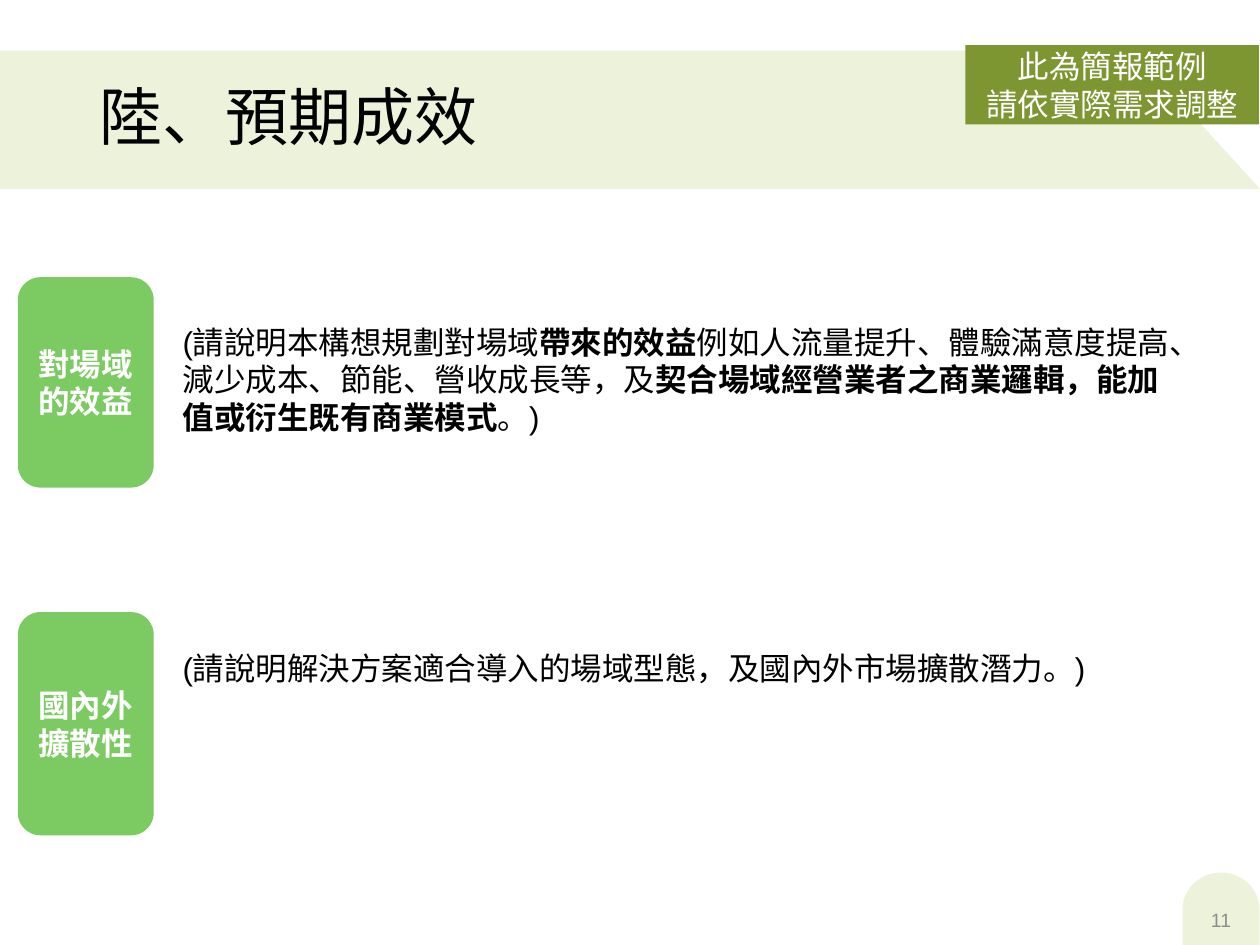
"""Build the expected-benefits slide."""
from dataclasses import dataclass

from pptx import Presentation
from pptx.dml.color import RGBColor
from pptx.enum.shapes import MSO_SHAPE as Preset
from pptx.enum.text import MSO_ANCHOR as Anchor, MSO_AUTO_SIZE as AutoSize, PP_ALIGN as Align
from pptx.shapes.autoshape import Shape
from pptx.slide import Slide
from pptx.util import Cm, Pt

PALE = RGBColor(0xED, 0xF3, 0xDB)
OLIVE = RGBColor(0x7E, 0x96, 0x32)
GREEN = RGBColor(0x7C, 0xCA, 0x62)
GRAY = RGBColor(0x8C, 0x8C, 0x8C)
WHITE = RGBColor(0xFF, 0xFF, 0xFF)
BLACK = RGBColor(0x00, 0x00, 0x00)
FONT = "Arial"
LABEL_LEFT, LABEL_WIDTH = 0.36, 2.74
BODY_LEFT, BODY_WIDTH = 3.43, 20.62


@dataclass(frozen=True)
class Box:
    left: float
    top: float
    width: float
    height: float

    def lengths(self) -> tuple[Cm, Cm, Cm, Cm]:
        return Cm(self.left), Cm(self.top), Cm(self.width), Cm(self.height)


@dataclass(frozen=True)
class Style:
    size: float
    color: RGBColor
    bold: bool = False
    align: Align = Align.LEFT
    anchor: Anchor = Anchor.MIDDLE


@dataclass(frozen=True)
class Benefit:
    label: str
    label_top: float
    label_height: float
    body_top: float
    body_height: float
    phrases: tuple[tuple[str, bool], ...]


BODY_STYLE = Style(18, BLACK, anchor=Anchor.TOP)
LABEL_STYLE = Style(18, WHITE, bold=True, align=Align.CENTER)

BENEFITS = (
    Benefit("對場域的效益", 5.59, 4.24, 6.38, 2.57, (
        ("(請說明本構想規劃對場域", False),
        ("帶來的效益", True),
        ("例如人流量提升、體驗滿意度提高、減少成本、節能、營收成長等，及", False),
        ("契合場域經營業者之商業邏輯，能加值或衍生既有商業模式", True),
        ("。)", False),
    )),
    Benefit("國內外擴散性", 12.34, 4.5, 12.95, 1.02, (
        ("(請說明解決方案適合導入的場域型態，及國內外市場擴散潛力。)", False),
    )),
)


def paint(shape: Shape, color: RGBColor) -> None:
    shape.shadow.inherit = False
    shape.fill.solid()
    shape.fill.fore_color.rgb = color
    shape.line.fill.background()


def format_text(shape: Shape, style: Style) -> None:
    frame = shape.text_frame
    frame.word_wrap = True
    frame.vertical_anchor = style.anchor
    for paragraph in frame.paragraphs:
        paragraph.alignment = style.align
        for run in paragraph.runs:
            run.font.name = FONT
            run.font.size = Pt(style.size)
            run.font.bold = style.bold
            run.font.color.rgb = style.color


def add_block(slide: Slide, preset: Preset, box: Box, color: RGBColor) -> Shape:
    block = slide.shapes.add_shape(preset, *box.lengths())
    paint(block, color)
    return block


def add_text(slide: Slide, box: Box, text: str, style: Style) -> Shape:
    text_box = slide.shapes.add_textbox(*box.lengths())
    text_box.text_frame.text = text
    format_text(text_box, style)
    return text_box


def add_banner(slide: Slide) -> None:
    builder = slide.shapes.build_freeform(Cm(0), Cm(1.02))
    corners = ((22.86, 1.02), (25.4, 3.81), (0, 3.81))
    builder.add_line_segments([(Cm(x), Cm(y)) for x, y in corners], close=True)
    paint(builder.convert_to_shape(), PALE)


def add_benefit(slide: Slide, benefit: Benefit) -> None:
    body_box = Box(BODY_LEFT, benefit.body_top, BODY_WIDTH, benefit.body_height)
    body = add_text(slide, body_box, "", BODY_STYLE)
    body.text_frame.auto_size = AutoSize.SHAPE_TO_FIT_TEXT
    paragraph = body.text_frame.paragraphs[0]
    for phrase, _ in benefit.phrases:
        paragraph.add_run().text = phrase
    format_text(body, BODY_STYLE)
    for run, (_, bold) in zip(paragraph.runs, benefit.phrases):
        run.font.bold = bold

    label_box = Box(LABEL_LEFT, benefit.label_top, LABEL_WIDTH, benefit.label_height)
    label = add_block(slide, Preset.ROUNDED_RECTANGLE, label_box, GREEN)
    label.text_frame.text = benefit.label
    format_text(label, LABEL_STYLE)


def main() -> None:
    presentation = Presentation()
    presentation.slide_width, presentation.slide_height = Cm(25.4), Cm(19.05)
    slide = presentation.slides.add_slide(presentation.slide_layouts[6])

    add_banner(slide)
    page_tab = add_block(slide, Preset.FLOWCHART_DELAY, Box(23.88, 17.55, 1.47, 1.55), PALE)
    page_tab.rotation = 270
    title = add_text(slide, Box(1.75, 1.02, 21.89, 2.79), "陸、預期成效", Style(36, BLACK))
    title.text_frame.paragraphs[0].line_spacing = 0.9
    add_text(slide, Box(23.93, 18.03, 1.37, 1.02), "11", Style(11, GRAY, align=Align.CENTER))

    notice = add_block(slide, Preset.RECTANGLE, Box(19.46, 0.91, 5.92, 1.6), OLIVE)
    notice.text_frame.text = "此為簡報範例\n請依實際需求調整"
    format_text(notice, Style(18, WHITE, align=Align.CENTER))

    for benefit in BENEFITS:
        add_benefit(slide, benefit)
    presentation.save("out.pptx")


if __name__ == "__main__":
    main()
